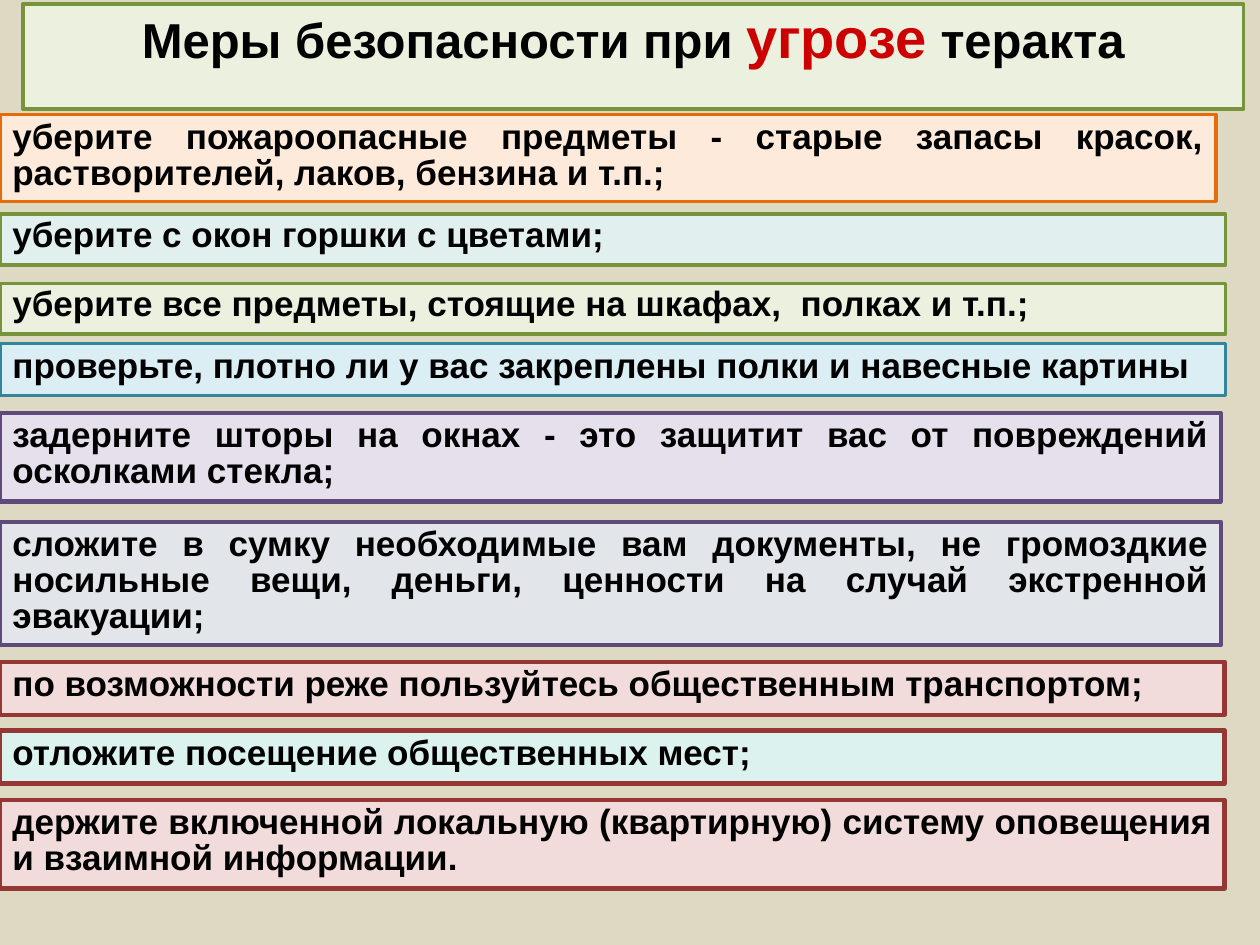
from pptx import Presentation
from pptx.dml.color import RGBColor
from pptx.enum.shapes import MSO_SHAPE
from pptx.enum.text import MSO_ANCHOR, MSO_AUTO_SIZE, PP_ALIGN
from pptx.util import Cm, Pt

COLORS = {
    "background": "DDD9C3",
    "text": "000000",
    "threat": "CC0000",
    "orange": "E46C0A",
    "peach": "FDEADA",
    "green": "77933C",
    "pale_green": "EBF1DE",
    "pale_aqua": "E1EFEE",
    "teal": "31859C",
    "pale_blue": "DBEEF4",
    "purple": "604A7B",
    "lilac": "E6E0EC",
    "pale_gray": "E2E6EA",
    "red": "953735",
    "pink": "F2DCDB",
    "mint": "DCF2EE",
}

HEADING = [
    ("Меры безопасности при ", 28, "text"),
    ("угрозе", 32, "threat"),
    (" теракта", 28, "text"),
]

MEASURES = [
    ("уберите пожароопасные предметы - старые запасы красок, растворителей, лаков, бензина и т.п.;",
     2.31, 24.51, 1.75, "peach", "orange", 2, 0.85),
    ("уберите с окон горшки с цветами;",
     4.32, 24.71, 1.02, "pale_aqua", "green", 2, 0.8),
    ("уберите все предметы, стоящие на шкафах,  полках и т.п.;",
     5.72, 24.71, 1.02, "pale_green", "green", 2, 0.8),
    ("проверьте, плотно ли у вас закреплены полки и навесные картины",
     6.93, 24.71, 1.04, "pale_blue", "teal", 2, 0.85),
    ("задерните шторы на окнах - это защитит вас от повреждений осколками стекла;",
     8.33, 24.61, 1.78, "lilac", "purple", 2.5, 0.85),
    ("сложите в сумку необходимые вам документы, не громоздкие носильные вещи, деньги, "
     "ценности на случай экстренной эвакуации;",
     10.52, 24.61, 2.49, "pale_gray", "purple", 2.5, 0.85),
    ("по возможности реже пользуйтесь общественным транспортом;",
     13.34, 24.69, 1.07, "pink", "red", 2.5, 0.85),
    ("отложите посещение общественных мест;",
     14.73, 24.69, 1.07, "mint", "red", 2.5, 0.85),
    ("держите включенной локальную (квартирную) систему оповещения и взаимной информации.",
     16.13, 24.69, 1.78, "pink", "red", 2.5, 0.85),
]


def color(name):
    return RGBColor.from_string(COLORS[name])


def paint(panel, fill, border, border_width):
    panel.fill.solid()
    panel.fill.fore_color.rgb = color(fill)
    panel.line.color.rgb = color(border)
    panel.line.width = Pt(border_width)


def add_text(paragraph, text, *, size=20, ink="text", bold=True):
    run = paragraph.add_run()
    run.text = text
    run.font.name = "Arial"
    run.font.size = Pt(size)
    run.font.bold = bold
    run.font.color.rgb = color(ink)


def prepare_paragraph(panel, alignment, line_spacing):
    frame = panel.text_frame
    frame.word_wrap = True
    frame.auto_size = MSO_AUTO_SIZE.SHAPE_TO_FIT_TEXT
    frame.vertical_anchor = MSO_ANCHOR.TOP
    paragraph = frame.paragraphs[0]
    paragraph.alignment = alignment
    paragraph.line_spacing = line_spacing
    paragraph.space_before = Pt(0)
    return paragraph


def format_heading(heading):
    heading.left, heading.top = Cm(0.46), Cm(0.08)
    heading.width, heading.height = Cm(24.61), Cm(1.55)
    paint(heading, "pale_green", "green", 2)
    paragraph = prepare_paragraph(heading, PP_ALIGN.CENTER, 0.9)
    for text, size, ink in HEADING:
        add_text(paragraph, text, size=size, ink=ink)


def add_measure(slide, text, top, width, height, fill, border, border_width, line_spacing):
    measure = slide.shapes.add_shape(
        MSO_SHAPE.RECTANGLE, Cm(0), Cm(top), Cm(width), Cm(height))
    measure.shadow.inherit = False
    paint(measure, fill, border, border_width)
    add_text(prepare_paragraph(measure, PP_ALIGN.JUSTIFY, line_spacing), text)


def main():
    presentation = Presentation()
    presentation.slide_width = Cm(25.4)
    presentation.slide_height = Cm(19.05)
    slide = presentation.slides.add_slide(presentation.slide_layouts[5])
    slide.background.fill.solid()
    slide.background.fill.fore_color.rgb = color("background")
    format_heading(slide.shapes.title)
    for measure in MEASURES:
        add_measure(slide, *measure)
    presentation.save("out.pptx")


if __name__ == "__main__":
    main()
